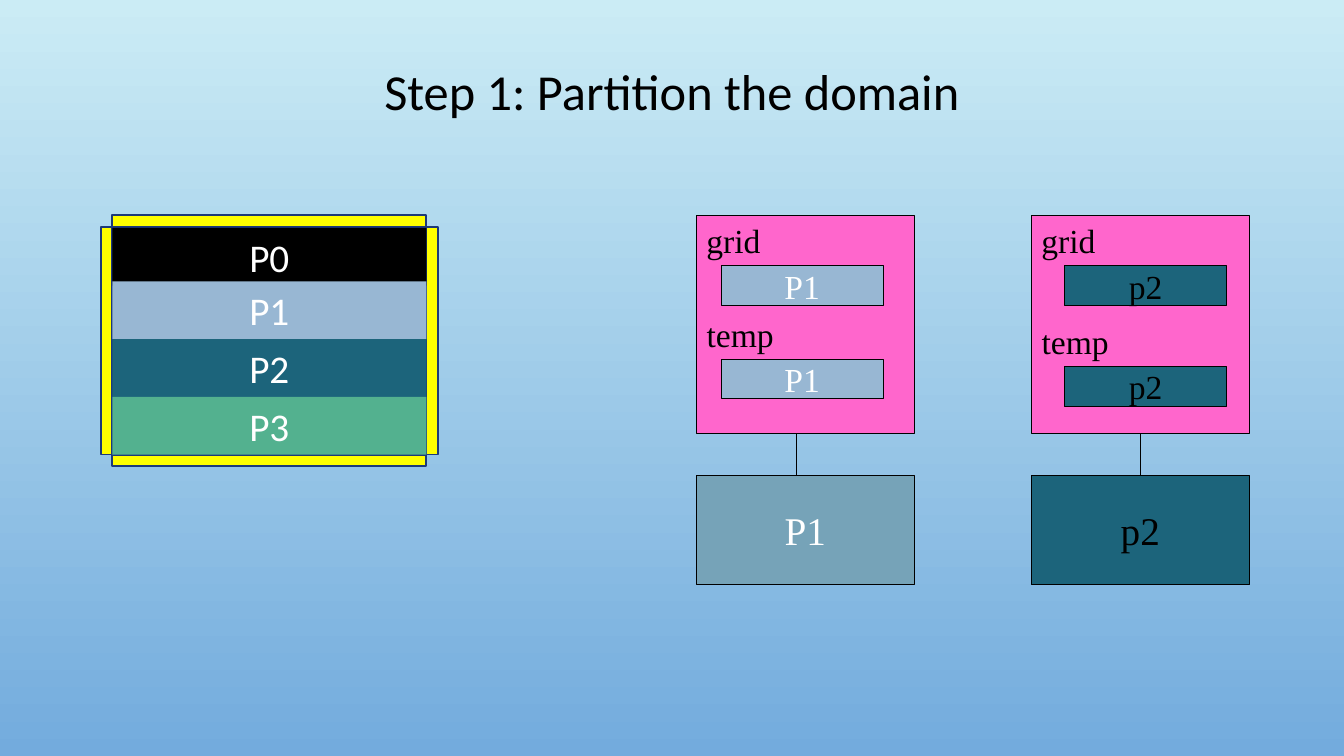
from dataclasses import dataclass

from lxml import etree
from pptx import Presentation
from pptx import util as u
from pptx.dml.color import RGBColor
from pptx.enum import shapes, text
from pptx.oxml import ns

PX = 9525


@dataclass(frozen=True)
class Theme:
    sky_top: str = "CBECF5"
    sky_bottom: str = "73ABDD"
    black: str = "000000"
    white: str = "FFFFFF"
    halo: str = "FFFF00"
    halo_edge: str = "1D3A79"
    memory: str = "FF66CC"
    pale_blue: str = "98B7D3"
    steel: str = "76A3B8"
    teal: str = "1C647B"
    green: str = "53B18F"
    sans: str = "Calibri"
    serif: str = "Times New Roman"
    title_size: int = 36
    large: int = 28
    medium: int = 24
    thin: float = 0.75
    thick: float = 1.25


THEME = Theme()


@dataclass(frozen=True)
class Node:
    name: str
    left: int
    array_left: int
    temp_top: int
    array_fill: str
    cpu_fill: str
    ink: str


def px(*lengths):
    return [u.Emu(length * PX) for length in lengths]


def color(value):
    return RGBColor.from_string(value)


def write(box, words, size, ink, font):
    para = box.text_frame.paragraphs[0]
    para.alignment = text.PP_ALIGN.CENTER
    span = para.add_run()
    span.text = words
    span.font.size = u.Pt(size)
    span.font.name = font
    span.font.color.rgb = color(ink)
    return para


def add_rect(page, bounds, fill, edge=None, weight=THEME.thin):
    box = page.shapes.add_shape(shapes.MSO_SHAPE.RECTANGLE, *px(*bounds))
    box.shadow.inherit = False
    box.fill.solid()
    box.fill.fore_color.rgb = color(fill)
    if edge:
        box.line.color.rgb = color(edge)
        box.line.width = u.Pt(weight)
    else:
        box.line.fill.background()
    return box


def add_named_rect(page, bounds, fill, words, size, ink):
    box = add_rect(page, bounds, fill, THEME.black)
    box.text_frame.word_wrap = False
    box.text_frame.vertical_anchor = text.MSO_ANCHOR.MIDDLE
    write(box, words, size, ink, THEME.serif)
    return box


def add_label(page, bounds, words):
    box = page.shapes.add_textbox(*px(*bounds))
    frame = box.text_frame
    frame.word_wrap = False
    frame.auto_size = text.MSO_AUTO_SIZE.SHAPE_TO_FIT_TEXT
    frame.vertical_anchor = text.MSO_ANCHOR.MIDDLE
    write(box, words, THEME.medium, THEME.black, THEME.serif)


def add_link(page, x, memory, cpu, centered):
    top, bottom = memory.top + memory.height, cpu.top
    link = page.shapes.add_connector(
        shapes.MSO_CONNECTOR.STRAIGHT, x * PX, top, x * PX, bottom)
    if centered:
        link.begin_connect(memory, 2)
        link.end_connect(cpu, 0)
    link.line.color.rgb = color(THEME.black)
    link.line.width = u.Pt(THEME.thin)
    etree.SubElement(link._element.spPr, ns.qn("a:effectLst"))


def set_background(page):
    fill = page.background.fill
    fill.gradient()
    fill.gradient_angle = 270
    for stop, shade in zip(fill.gradient_stops, (THEME.sky_top, THEME.sky_bottom)):
        stop.color.rgb = color(shade)


def set_title(page, words):
    title = page.shapes.title
    title.left, title.top, title.width, title.height = px(96, 31, 1088, 118)
    title.text_frame.vertical_anchor = text.MSO_ANCHOR.MIDDLE
    title.text_frame.auto_size = text.MSO_AUTO_SIZE.NONE
    para = write(title, words, THEME.title_size, THEME.black, THEME.sans)
    para.line_spacing = 0.9


def add_domain(page):
    left, top, width, halo = 107, 216, 299, 11
    height = 217
    halo_bounds = (
        (left, top + height, width, halo),
        (left, top - halo, width, halo),
        (left - halo, top, halo, height),
        (left + width, top, halo, height),
    )
    for bounds in halo_bounds:
        add_rect(page, bounds, THEME.halo, THEME.halo_edge, THEME.thick)
    bands = (
        ("P0", 217, THEME.black),
        ("P1", 268, THEME.pale_blue),
        ("P2", 323, THEME.teal),
        ("P3", 378, THEME.green),
    )
    for name, band_top, fill in bands:
        band = add_rect(page, (left, band_top, width, 55), fill)
        band.text_frame.word_wrap = True
        band.text_frame.vertical_anchor = text.MSO_ANCHOR.TOP
        band.text_frame.auto_size = text.MSO_AUTO_SIZE.SHAPE_TO_FIT_TEXT
        write(band, name, THEME.large, THEME.white, THEME.sans)


def add_node(page, node):
    top, side, label_height = 205, 208, 48
    cpu = add_named_rect(page, (node.left, 453, side, 104), node.cpu_fill,
                         node.name, THEME.large, node.ink)
    memory = add_rect(page, (node.left, top, side, side), THEME.memory, THEME.black)
    for words, label_top, label_width in (("grid", top, 71), ("temp", node.temp_top, 84)):
        add_named_rect(page, (node.array_left, label_top + label_height, 154, 38),
                       node.array_fill, node.name, THEME.medium, node.ink)
        add_label(page, (node.left, label_top, label_width, label_height), words)
    link_x = node.array_left + 72
    add_link(page, link_x, memory, cpu, link_x == node.left + side // 2)


def main():
    deck = Presentation()
    deck.slide_width, deck.slide_height = px(1280, 720)
    page = deck.slides.add_slide(deck.slide_layouts[5])
    set_background(page)
    set_title(page, "Step 1: Partition the domain")
    add_domain(page)
    nodes = (
        Node("P1", 663, 687, 294, THEME.pale_blue, THEME.steel, THEME.white),
        Node("p2", 982, 1014, 301, THEME.teal, THEME.teal, THEME.black),
    )
    for node in nodes:
        add_node(page, node)
    deck.save("out.pptx")


if __name__ == "__main__":
    main()
